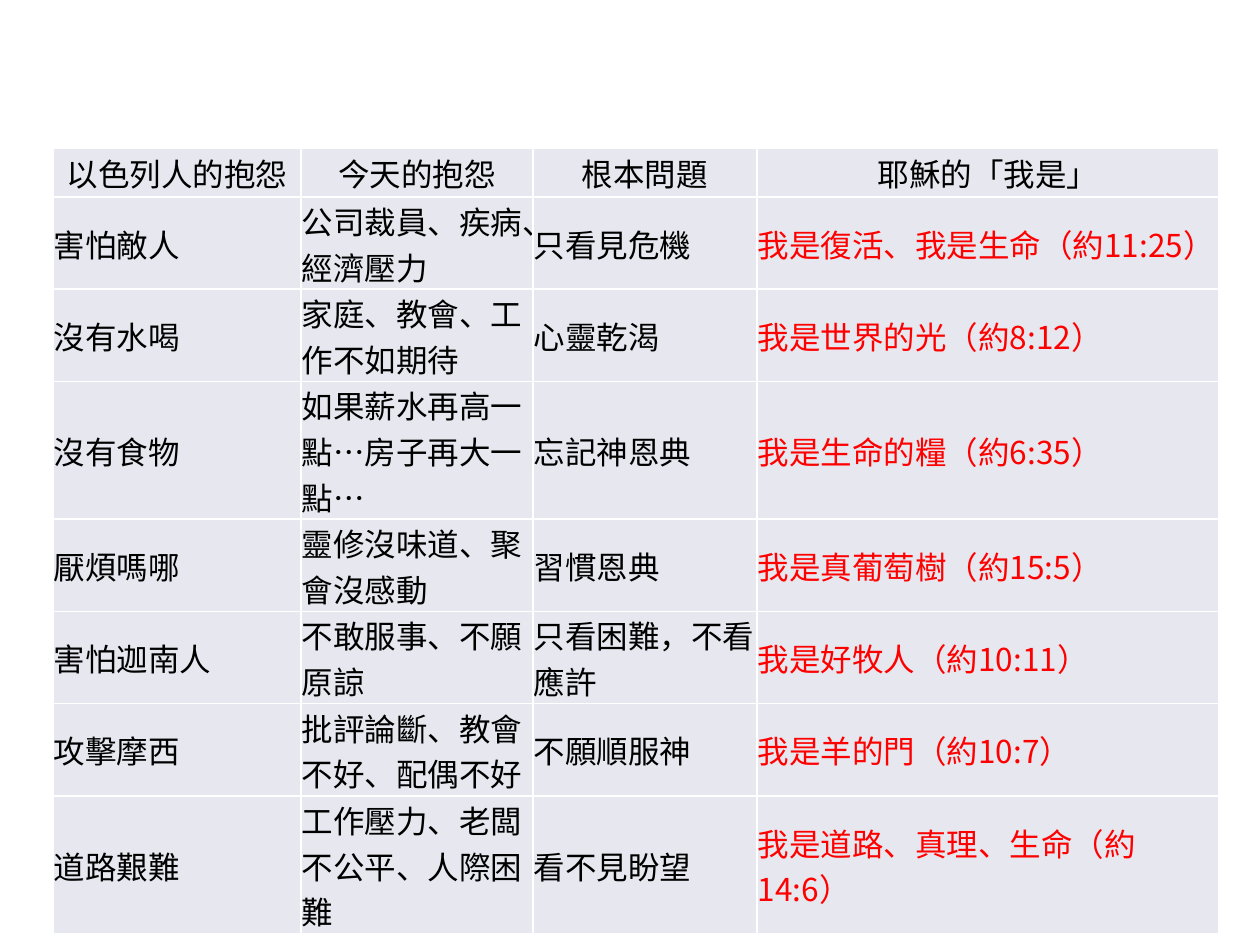
from pptx import Presentation
from pptx.dml.color import RGBColor as Rgb
from pptx.enum.text import MSO_ANCHOR as Anchor, PP_ALIGN as Align
from pptx.oxml.ns import qn
from pptx.util import Pt
from lxml.etree import SubElement

EMU_PER_PX = 914400 // 126
FONT = "Noto Sans CJK SC"
COLORS = {"text": "000000", "verse": "FF0000", "cell": "E7E8EF", "border": "FFFFFF"}

COLUMN_WIDTHS = [248, 232, 224, 462]
ROW_HEIGHTS = [49, 49, 49, 72, 49, 49, 72, 72]
ROWS = [
    ["以色列人的抱怨", "今天的抱怨", "根本問題", "耶穌的「我是」"],
    ["害怕敵人", "公司裁員、疾病、經濟壓力", "只看見危機", "我是復活、我是生命（約11:25）"],
    ["沒有水喝", "家庭、教會、工作不如期待", "心靈乾渴", "我是世界的光（約8:12）"],
    ["沒有食物", "如果薪水再高一點…房子再大一點…", "忘記神恩典", "我是生命的糧（約6:35）"],
    ["厭煩嗎哪", "靈修沒味道、聚會沒感動", "習慣恩典", "我是真葡萄樹（約15:5）"],
    ["害怕迦南人", "不敢服事、不願原諒", "只看困難，不看應許", "我是好牧人（約10:11）"],
    ["攻擊摩西", "批評論斷、教會不好、配偶不好", "不願順服神", "我是羊的門（約10:7）"],
    ["道路艱難", "工作壓力、老闆不公平、人際困難", "看不見盼望", "我是道路、真理、生命（約14:6）"],
]


def px(length):
    return length * EMU_PER_PX


def add_borders(cell):
    properties = cell._tc.get_or_add_tcPr()
    for side in ("a:lnL", "a:lnR", "a:lnT", "a:lnB"):
        line = SubElement(properties, qn(side), w=str(Pt(1)))
        fill = SubElement(line, qn("a:solidFill"))
        SubElement(fill, qn("a:srgbClr"), val=COLORS["border"])


def add_span(para, text, color):
    span = para.add_run()
    span.text = text
    span.font.size = Pt(18)
    span.font.name = FONT
    span.font.color.rgb = Rgb.from_string(COLORS[color])
    # East Asian text takes its own typeface
    SubElement(span._r.get_or_add_rPr(), qn("a:ea"), typeface=FONT)


def fill_cell(cell, text, color, align):
    add_borders(cell)
    cell.fill.solid()
    cell.fill.fore_color.rgb = Rgb.from_string(COLORS["cell"])
    cell.margin_left = cell.margin_right = cell.margin_top = px(1)
    cell.margin_bottom = 0
    cell.vertical_anchor = Anchor.MIDDLE
    para = cell.text_frame.paragraphs[0]
    para.alignment = align
    add_span(para, text, color)


def add_complaint_table(page, left, top, height):
    frame = page.shapes.add_table(len(ROWS), len(COLUMN_WIDTHS), px(left), px(top),
                                  px(sum(COLUMN_WIDTHS)), px(height))
    table = frame.table
    for column, width in zip(table.columns, COLUMN_WIDTHS):
        column.width = px(width)
    for row, row_height in zip(table.rows, ROW_HEIGHTS):
        row.height = px(row_height)
    frame.height = px(height)

    # Centred header row, red verses in the last column
    last = len(COLUMN_WIDTHS) - 1
    for r, texts in enumerate(ROWS):
        for c, text in enumerate(texts):
            color = "verse" if r > 0 and c == last else "text"
            align = Align.CENTER if r == 0 else Align.LEFT
            fill_cell(table.cell(r, c), text, color, align)


def main():
    deck = Presentation()
    deck.slide_width, deck.slide_height = px(1260), px(945)
    page = deck.slides.add_slide(deck.slide_layouts[6])
    add_complaint_table(page, 53, 148, 663)
    deck.save("out.pptx")


if __name__ == "__main__":
    main()
